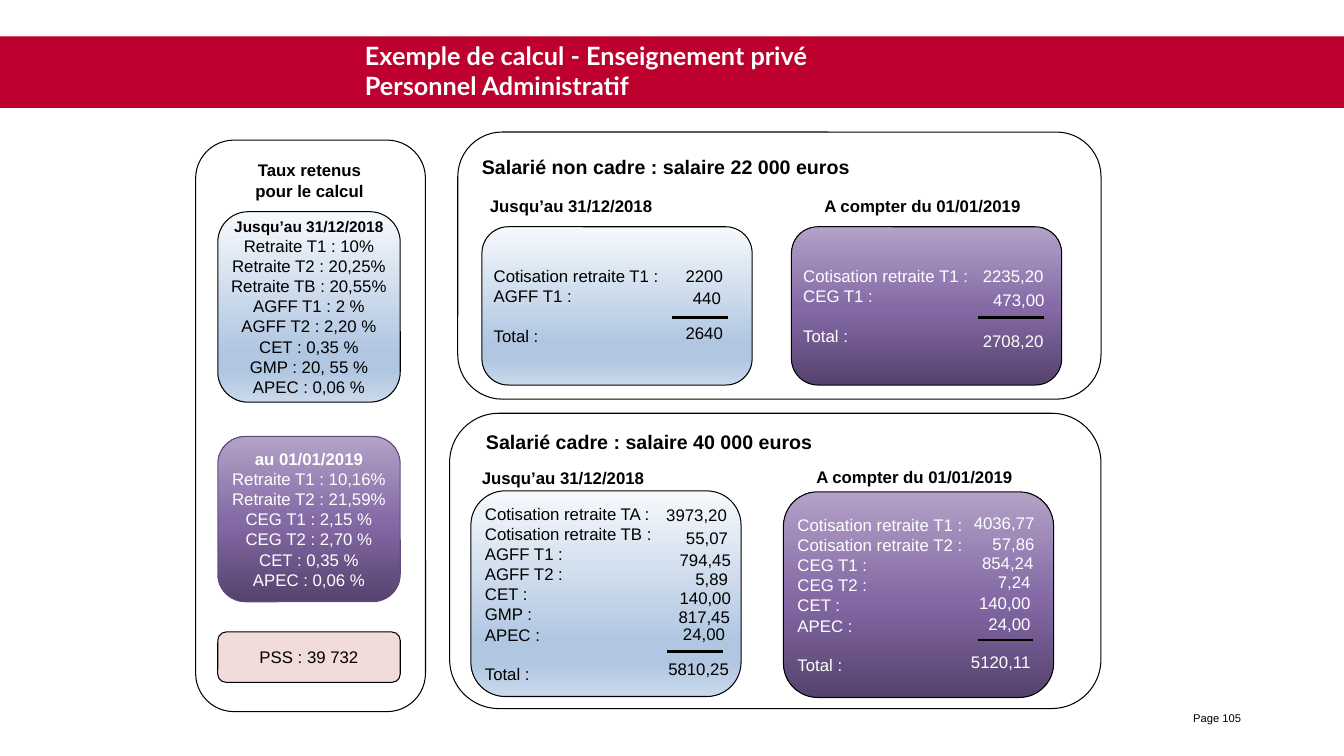
from dataclasses import dataclass

from lxml.etree import SubElement
from pptx import Presentation
from pptx.dml.color import RGBColor
from pptx.enum.shapes import MSO_CONNECTOR, MSO_SHAPE
from pptx.enum.text import MSO_ANCHOR, MSO_AUTO_SIZE, PP_ALIGN
from pptx.oxml.ns import qn
from pptx.util import Inches, Pt


@dataclass(frozen=True)
class Theme:
    """Colours, fonts and type sizes of the slide."""
    red: str = "BD002E"
    pink: str = "F2DCDB"
    black: str = "000000"
    white: str = "FFFFFF"
    plum: str = "604A7B"
    blue_stops: tuple = ((0, "F6F9FC"), (74, "B0C6E1"), (83, "B0C6E1"), (100, "CAD9EB"))
    purple_stops: tuple = ((0, "56426E"), (48, "8469A5"), (100, "B3A2C7"))
    body_font: str = "Arial"
    title_font: str = "Lato"
    title: int = 18
    section: int = 14
    body: int = 12
    small: int = 11
    footer: int = 8


THEME = Theme()
BEFORE, AFTER = "Jusqu’au 31/12/2018", "A compter du 01/01/2019"

OLD_RATES = ["Retraite T1 : 10%", "Retraite T2 : 20,25%", "Retraite TB : 20,55%",
             "AGFF T1 : 2 %", "AGFF T2 : 2,20 %", "CET : 0,35 %", "GMP : 20, 55 %",
             "APEC : 0,06 %"]
NEW_RATES = ["Retraite T1 : 10,16%", "Retraite T2 : 21,59%", "CEG T1 : 2,15 %",
             "CEG T2 : 2,70 %", "CET : 0,35 %", "APEC : 0,06 %"]

CALCULATIONS = [
    dict(box=(4.78, 2.25, 2.68, 1.57), new=False,
         labels=["Cotisation retraite T1 :", "AGFF T1 :"],
         amounts=[("2200", 6.52, 2.59), ("440", 6.5, 2.81), ("2640", 6.52, 3.15)],
         rule=(6.67, 7.22, 3.15)),
    dict(box=(7.85, 2.25, 2.68, 1.57), new=True,
         labels=["Cotisation retraite T1 :", "CEG T1 :"],
         amounts=[("2235,20", 9.7, 2.59), ("473,00", 9.71, 2.83), ("2708,20", 9.7, 3.23)],
         rule=(9.7, 10.35, 3.15)),
    dict(box=(4.67, 4.87, 2.68, 2.04), new=False,
         labels=["Cotisation retraite TA : Cotisation retraite TB :", "AGFF T1 :",
                 "AGFF T2 :", "CET :", "GMP :", "APEC :"],
         amounts=[("3973,20", 6.56, 4.96), ("55,07", 6.57, 5.19), ("794,45", 6.6, 5.4),
                  ("5,89", 6.57, 5.59), ("140,00", 6.6, 5.78), ("817,45", 6.59, 5.97),
                  ("24,00", 6.54, 6.14), ("5810,25", 6.58, 6.49)],
         rule=(6.62, 7.17, 6.46)),
    dict(box=(7.77, 4.88, 2.68, 2.04), new=True,
         labels=["Cotisation retraite T1 : Cotisation retraite T2 :", "CEG T1 :",
                 "CEG T2 :", "CET :", "APEC :"],
         amounts=[("4036,77", 9.61, 5.04), ("57,86", 9.61, 5.25), ("854,24", 9.6, 5.43),
                  ("7,24", 9.57, 5.62), ("140,00", 9.57, 5.83), ("24,00", 9.57, 6.04),
                  ("5120,11", 9.57, 6.42)],
         rule=(9.7, 10.25, 6.35)),
]


def style(paragraph, size, color, bold=False, align=PP_ALIGN.LEFT, font=THEME.body_font):
    """Format a whole paragraph."""
    paragraph.alignment = align
    paragraph.font.name = font
    paragraph.font.size = Pt(size)
    paragraph.font.bold = bold
    paragraph.font.color.rgb = RGBColor.from_string(color)


def add_label(slide, text, box, size=THEME.body, color=THEME.black, bold=False,
              align=PP_ALIGN.LEFT, side_inset=0):
    """Add a wrapping text box with one paragraph."""
    frame = slide.shapes.add_textbox(*map(Inches, box)).text_frame
    frame.word_wrap = True
    frame.margin_left = frame.margin_right = Inches(side_inset)
    frame.text = text
    style(frame.paragraphs[0], size, color, bold, align)


def add_rounded(slide, box, line=THEME.black):
    """Add an unfilled rounded rectangle with a thin outline."""
    rounded = slide.shapes.add_shape(MSO_SHAPE.ROUNDED_RECTANGLE, *map(Inches, box))
    rounded.shadow.inherit = False
    rounded.fill.background()
    rounded.line.color.rgb = RGBColor.from_string(line)
    rounded.line.width = Pt(0.75)
    return rounded


def fill_gradient(card, stops, angle):
    """Fill a card with a linear gradient of any number of stops."""
    card.fill.gradient()
    card.fill.gradient_angle = angle
    stop_list = card.element.spPr.find(".//" + qn("a:gsLst"))
    for stop in list(stop_list):
        stop_list.remove(stop)
    for position, color in stops:
        stop = SubElement(stop_list, qn("a:gs"), pos=str(position * 1000))
        SubElement(stop, qn("a:srgbClr"), val=color)


def add_card(slide, box, lines, color=THEME.black, align=PP_ALIGN.LEFT, line=THEME.black):
    """Add a rounded card holding one paragraph per line."""
    card = add_rounded(slide, box, line)
    frame = card.text_frame
    frame.word_wrap = True
    frame.vertical_anchor = MSO_ANCHOR.MIDDLE
    frame.margin_left = frame.margin_right = Inches(0.04)
    frame.text = "\n".join(lines)
    for paragraph in frame.paragraphs:
        style(paragraph, THEME.body, color, align=align)
    return card


def add_period_card(slide, box, lines, new, **options):
    """Add a purple card for the new rules or a blue one for the old rules."""
    card = add_card(slide, box, lines, THEME.white if new else THEME.black, **options)
    if new:
        fill_gradient(card, THEME.purple_stops, 90)
    else:
        fill_gradient(card, THEME.blue_stops, 270)
    return card


def add_rates(slide, box, heading, rates, new, heading_size, line):
    """Add a card of contribution rates under a bold heading."""
    card = add_period_card(slide, box, [heading, *rates], new,
                           align=PP_ALIGN.CENTER, line=line)
    first = card.text_frame.paragraphs[0]
    first.font.bold = True
    first.font.size = Pt(heading_size)


def add_calculation(slide, box, new, labels, amounts, rule):
    """Add a card of contributions with its amounts, sum rule and total."""
    card = add_period_card(slide, box, [*labels, "Total :"], new)
    card.text_frame.paragraphs[-1].space_before = Pt(13.8)
    for amount, left, top in amounts:
        add_label(slide, amount, (left, top, 0.65, 0.3),
                  color=THEME.white if new else THEME.black, align=PP_ALIGN.RIGHT)
    start, end, height = rule
    sum_rule = slide.shapes.add_connector(
        MSO_CONNECTOR.STRAIGHT, *map(Inches, (start, height, end, height)))
    sum_rule.line.color.rgb = RGBColor.from_string(THEME.black)
    sum_rule.line.width = Pt(2)
    SubElement(sum_rule.element.spPr, qn("a:effectLst"))


def add_title(slide):
    """Place the title over the red band."""
    title = slide.shapes.title
    title.left, title.top, title.width, title.height = map(Inches, (3.52, 0.38, 8.15, 0.63))
    frame = title.text_frame
    frame.auto_size = MSO_AUTO_SIZE.NONE
    frame.vertical_anchor = MSO_ANCHOR.MIDDLE
    heading = frame.paragraphs[0]
    heading.add_run().text = "Exemple de calcul - Enseignement privé"
    heading.add_line_break()
    heading.add_run().text = "Personnel Administratif"
    style(heading, THEME.title, THEME.white, bold=True, font=THEME.title_font)
    band = slide.shapes.add_shape(MSO_SHAPE.RECTANGLE,
                                  *map(Inches, (0, 0.36, 13.33, 0.71)))
    band.shadow.inherit = False
    band.fill.solid()
    band.fill.fore_color.rgb = RGBColor.from_string(THEME.red)
    band.line.fill.background()
    title.element.addprevious(band.element)


def main():
    """Build and save the slide."""
    deck = Presentation()
    deck.slide_width, deck.slide_height = Inches(13.33), Inches(7.5)
    slide = deck.slides.add_slide(deck.slide_layouts[5])
    add_title(slide)
    add_label(slide, "Page 105", (8.45, 7.01, 3.96, 0.24), THEME.footer,
              align=PP_ALIGN.RIGHT, side_inset=0.1)

    add_label(slide, "Taux retenus pour le calcul", (2.4, 1.54, 1.34, 0.5),
              bold=True, align=PP_ALIGN.CENTER)
    add_rates(slide, (2.16, 2.1, 1.81, 1.89), BEFORE, OLD_RATES, False,
              THEME.small, THEME.black)
    add_rates(slide, (2.16, 4.33, 1.81, 1.64), "au 01/01/2019", NEW_RATES, True,
              THEME.body, THEME.plum)
    ceiling = add_card(slide, (2.16, 6.27, 1.81, 0.5), ["PSS : 39 732"],
                       align=PP_ALIGN.CENTER)
    ceiling.fill.solid()
    ceiling.fill.fore_color.rgb = RGBColor.from_string(THEME.pink)

    for text, left, top in [("Salarié non cadre : salaire 22 000 euros", 4.78, 1.49),
                            ("Salarié cadre : salaire 40 000 euros", 4.82, 4.22)]:
        add_label(slide, text, (left, top, 5.8, 0.34), THEME.section, bold=True)
    for text, left, top, width in [(BEFORE, 4.78, 1.89, 1.77), (AFTER, 7.77, 1.89, 2.76),
                                   (BEFORE, 4.7, 4.59, 1.77), (AFTER, 7.69, 4.58, 2.76)]:
        add_label(slide, text, (left, top, width, 0.3), bold=True, align=PP_ALIGN.CENTER)
    for calculation in CALCULATIONS:
        add_calculation(slide, **calculation)

    for panel in [(1.94, 1.39, 2.28, 5.67), (4.54, 1.31, 6.38, 2.65),
                  (4.46, 4.1, 6.46, 2.93)]:
        add_rounded(slide, panel)
    deck.save("out.pptx")


if __name__ == "__main__":
    main()
